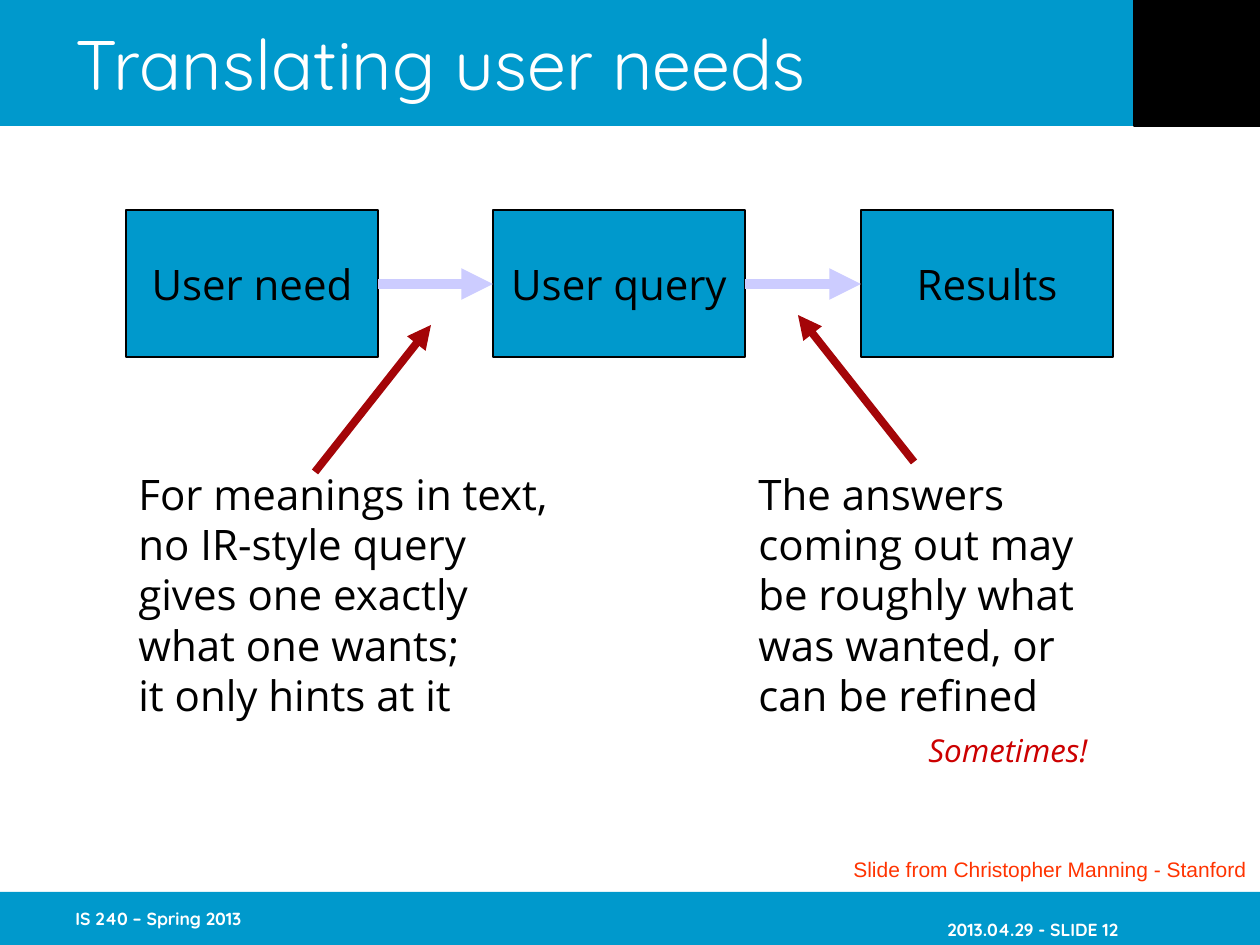
from lxml.etree import SubElement
from pptx import Presentation
from pptx.dml.color import RGBColor
from pptx.enum.shapes import MSO_CONNECTOR, MSO_SHAPE
from pptx.enum.text import MSO_ANCHOR, MSO_AUTO_SIZE, PP_ALIGN
from pptx.oxml.ns import qn
from pptx.util import Pt

PIXEL = 914400 / 126
COLORS = {
    "band": "0099CC",
    "black": "000000",
    "white": "FFFFFF",
    "flow": "CCCCFF",
    "pointer": "A40508",
    "remark": "CC0000",
    "credit": "FF3300",
}
TITLE = {"name": "Quicksand", "size": Pt(40), "color": "white"}
FOOTER = {"name": "Quicksand", "size": Pt(10), "bold": True, "color": "white"}
BODY = {"name": "Open Sans", "size": Pt(24), "color": "black"}
REMARK = BODY | {"size": Pt(18), "italic": True, "color": "remark"}
CREDIT = {"name": "Arial", "size": Pt(12), "color": "credit"}
STEPS = ["User need", "User query", "Results"]
QUERY_NOTE = [
    "For meanings in text,",
    "no IR-style query",
    "gives one exactly",
    "what one wants;",
    "it only hints at it",
]
ANSWER_NOTE = [
    "The answers",
    "coming out may",
    "be roughly what",
    "was wanted, or",
    "can be refined",
]


def px(length):
    """Turn pixels into EMU."""
    return round(length * PIXEL)


def rgb(name):
    """Look up a named colour."""
    return RGBColor.from_string(COLORS[name])


def set_attributes(target, values):
    """Set each value of a dict as an attribute."""
    for name, value in values.items():
        setattr(target, name, value)


def write_paragraph(paragraph, text, style, alignment=PP_ALIGN.LEFT):
    """Put formatted text in a paragraph."""
    paragraph.alignment = alignment
    run = paragraph.add_run()
    run.text = text
    set_attributes(run.font, {key: value for key, value in style.items() if key != "color"})
    run.font.color.rgb = rgb(style["color"])


def add_rectangle(slide, box, fill, outline=None):
    """Add a flat rectangle with an optional thin outline."""
    shape = slide.shapes.add_shape(MSO_SHAPE.RECTANGLE, *map(px, box))
    shape.shadow.inherit = False
    shape.fill.solid()
    shape.fill.fore_color.rgb = rgb(fill)
    if outline:
        shape.line.color.rgb = rgb(outline)
        shape.line.width = Pt(0.75)
    else:
        shape.line.fill.background()
    return shape


def add_text(slide, box, lines, style, alignment=PP_ALIGN.LEFT, **frame_values):
    """Add a text box with one paragraph for each line."""
    frame = slide.shapes.add_textbox(*map(px, box)).text_frame
    set_attributes(frame, {"word_wrap": True} | frame_values)
    for index, line in enumerate(lines):
        paragraph = frame.add_paragraph() if index else frame.paragraphs[0]
        write_paragraph(paragraph, line, style, alignment)
    return frame


def add_arrow(slide, start, end, color, width):
    """Add a straight arrow that points at its end."""
    points = map(px, (*start, *end))
    connector = slide.shapes.add_connector(MSO_CONNECTOR.STRAIGHT, *points)
    connector.line.color.rgb = rgb(color)
    connector.line.width = Pt(width)
    SubElement(connector.line._get_or_add_ln(), qn("a:tailEnd"), type="triangle")
    SubElement(connector._element.spPr, qn("a:effectLst"))


def add_title(slide, text):
    """Place the title placeholder over the top band."""
    title = slide.shapes.title
    slide.shapes._spTree.append(title._element)
    set_attributes(title, {"left": px(63), "top": 0, "width": px(1071), "height": px(126)})
    set_attributes(title.text_frame, {
        "vertical_anchor": MSO_ANCHOR.MIDDLE,
        "auto_size": MSO_AUTO_SIZE.NONE,
    })
    write_paragraph(title.text_frame.paragraphs[0], text, TITLE)


def add_frame(slide):
    """Add the bands, the corner, the footers and the title."""
    add_rectangle(slide, (0, 0, 1260, 126), "band")
    add_rectangle(slide, (0, 892, 1260, 53), "band")
    add_rectangle(slide, (1134, 0, 126, 126), "black", "black")
    middle = {"vertical_anchor": MSO_ANCHOR.MIDDLE, "margin_right": 0}
    add_text(slide, (63, 892, 262, 53), ["IS 240 – Spring 2013"], FOOTER, **middle)
    add_text(slide, (856, 914, 262, 30), ["2013.04.29 - SLIDE 12"], FOOTER,
             PP_ALIGN.RIGHT, margin_top=0, margin_bottom=0, **middle)
    add_title(slide, "Translating user needs")


def add_flow(slide):
    """Add the row of steps joined by arrows."""
    lefts = [126 + index * 735 // 2 for index in range(len(STEPS))]
    for left, step in zip(lefts, STEPS):
        shape = add_rectangle(slide, (left, 210, 252, 147), "band", "black")
        set_attributes(shape.text_frame, {
            "word_wrap": False,
            "vertical_anchor": MSO_ANCHOR.MIDDLE,
        })
        write_paragraph(shape.text_frame.paragraphs[0], step, BODY, PP_ALIGN.CENTER)
    for left, following in zip(lefts, lefts[1:]):
        add_arrow(slide, (left + 252, 284), (following, 284), "flow", 6)


def add_notes_below(slide):
    """Add the two explanations with their pointers and the credit."""
    add_arrow(slide, (315, 472), (431, 325), "pointer", 4.5)
    add_text(slide, (126, 462, 460, 265), QUERY_NOTE, BODY)
    add_arrow(slide, (914, 462), (798, 315), "pointer", 4.5)
    answer = add_text(slide, (746, 462, 378, 315), ANSWER_NOTE, BODY)
    remark = answer.add_paragraph()
    remark._p.get_or_add_pPr().set("marL", str(px(170)))
    remark.space_before = Pt(6)
    write_paragraph(remark, "Sometimes!", REMARK)
    add_text(slide, (840, 850, 420, 38), ["Slide from Christopher Manning - Stanford"],
             CREDIT, PP_ALIGN.CENTER, word_wrap=False, margin_left=0, margin_right=0)


def main():
    """Build and save the presentation."""
    presentation = Presentation()
    set_attributes(presentation, {"slide_width": px(1260), "slide_height": px(945)})
    slide = presentation.slides.add_slide(presentation.slide_layouts[5])
    add_frame(slide)
    add_flow(slide)
    add_notes_below(slide)
    presentation.save("out.pptx")


if __name__ == "__main__":
    main()
